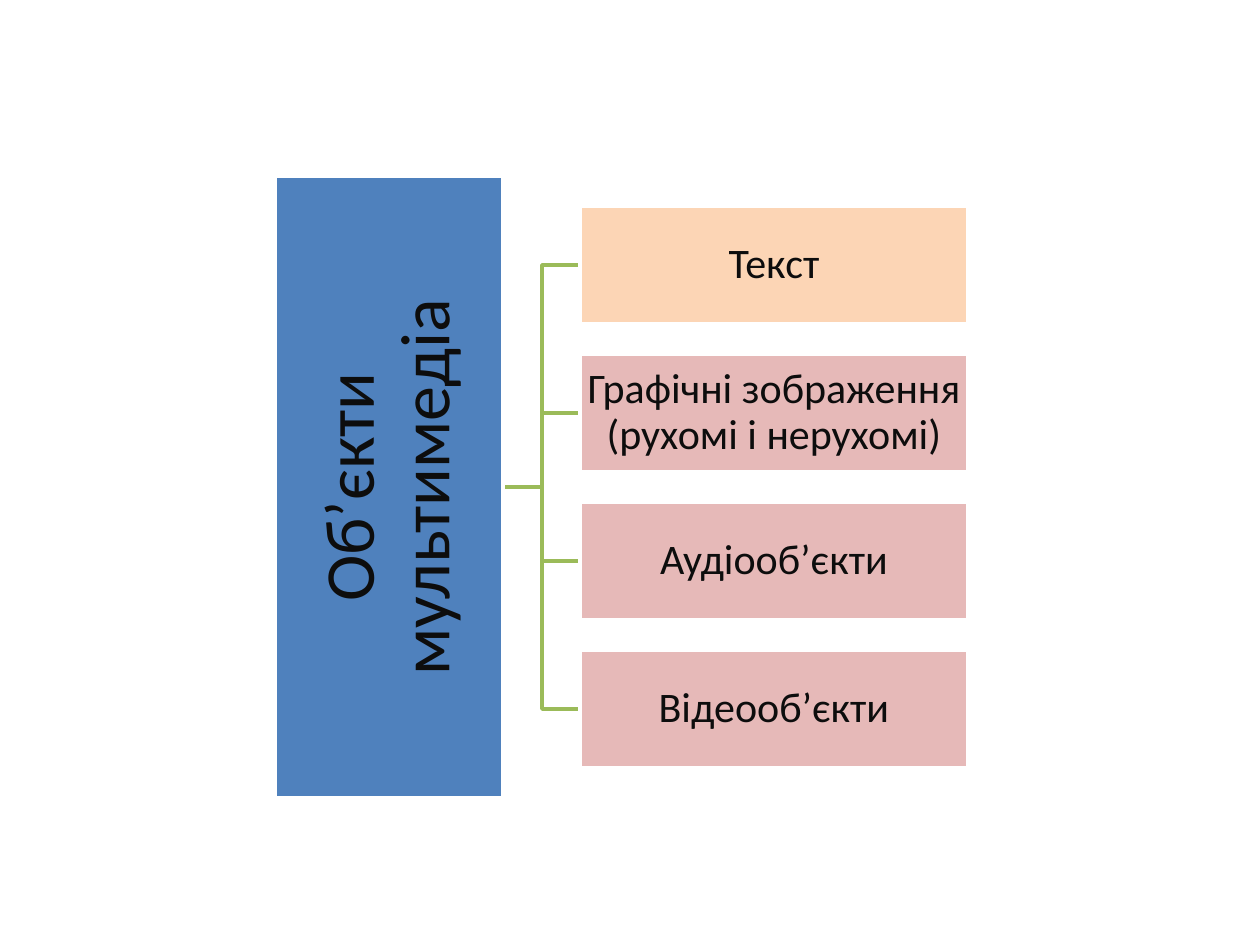
from pptx import Presentation
from pptx.dml.color import RGBColor
from pptx.enum.shapes import MSO_SHAPE
from pptx.enum.text import MSO_ANCHOR, PP_ALIGN
from pptx.util import Pt

PX = 914400 / 126
TOPIC = "Об’єкти мультимедіа"
BRANCHES = [
    ("Текст", "FCD5B5"),
    ("Графічні зображення (рухомі і нерухомі)", "E6B9B8"),
    ("Аудіооб’єкти", "E6B9B8"),
    ("Відеооб’єкти", "E6B9B8"),
]
# Branch column: four boxes at an equal pitch
BRANCH_LEFT, BRANCH_TOP, BRANCH_WIDTH, BRANCH_HEIGHT = 580, 206, 388, 118
PITCH = 148
# Topic bar, measured before its quarter turn
TOPIC_CENTER_X, TOPIC_LENGTH, TOPIC_THICKNESS = 389, 622, 228
MIDDLE_Y = BRANCH_TOP + (BRANCH_HEIGHT + PITCH * (len(BRANCHES) - 1)) // 2


def px(length):
    return round(length * PX)


def color(value):
    return RGBColor.from_string(value)


def apply(target, values):
    for name, value in values.items():
        setattr(target, name, value)


def outline(shape, value):
    shape.shadow.inherit = False
    shape.line.color.rgb = color(value)
    shape.line.width = Pt(2)


def add_box(slide, text, bounds, fill, size, inset, rotation=0):
    box = slide.shapes.add_shape(MSO_SHAPE.RECTANGLE, *map(px, bounds))
    box.rotation = rotation
    box.fill.solid()
    box.fill.fore_color.rgb = color(fill)
    outline(box, "FFFFFF")

    frame = box.text_frame
    margins = ("margin_left", "margin_top", "margin_right", "margin_bottom")
    apply(frame, {"word_wrap": True, "vertical_anchor": MSO_ANCHOR.MIDDLE,
                  **dict.fromkeys(margins, px(inset))})
    label = frame.paragraphs[0]
    label.text = text
    apply(label, {"alignment": PP_ALIGN.CENTER, "line_spacing": 0.9})
    apply(label.runs[0].font, {"name": "Calibri", "size": Pt(size)})
    label.runs[0].font.color.rgb = color("0D0D0D")


def add_bracket(slide, start, end):
    (x1, y1), (x2, y2) = start, end
    bend = (x1 + x2) / 2
    builder = slide.shapes.build_freeform(x1, y1, scale=PX)
    builder.add_line_segments([(bend, y1), (bend, y2), end], close=False)
    bracket = builder.convert_to_shape()
    bracket.fill.background()
    outline(bracket, "9BBB59")


def main():
    prs = Presentation()
    apply(prs, {"slide_width": px(1260), "slide_height": px(945)})
    slide = prs.slides.add_slide(prs.slide_layouts[6])

    # Brackets from the topic to each branch, behind the boxes
    tops = [BRANCH_TOP + PITCH * i for i in range(len(BRANCHES))]
    start = (TOPIC_CENTER_X + TOPIC_THICKNESS // 2, MIDDLE_Y)
    for top in reversed(tops):
        add_bracket(slide, start, (BRANCH_LEFT, top + BRANCH_HEIGHT // 2))

    # Topic bar, read from bottom to top
    topic_bounds = (TOPIC_CENTER_X - TOPIC_LENGTH // 2,
                    MIDDLE_Y - TOPIC_THICKNESS // 2,
                    TOPIC_LENGTH, TOPIC_THICKNESS)
    add_box(slide, TOPIC, topic_bounds, "4F81BD", 40, 4, rotation=270)

    # Branch boxes
    for (text, fill), top in zip(BRANCHES, tops):
        bounds = (BRANCH_LEFT, top, BRANCH_WIDTH, BRANCH_HEIGHT)
        add_box(slide, text, bounds, fill, 24, 2)

    prs.save("out.pptx")


if __name__ == "__main__":
    main()
